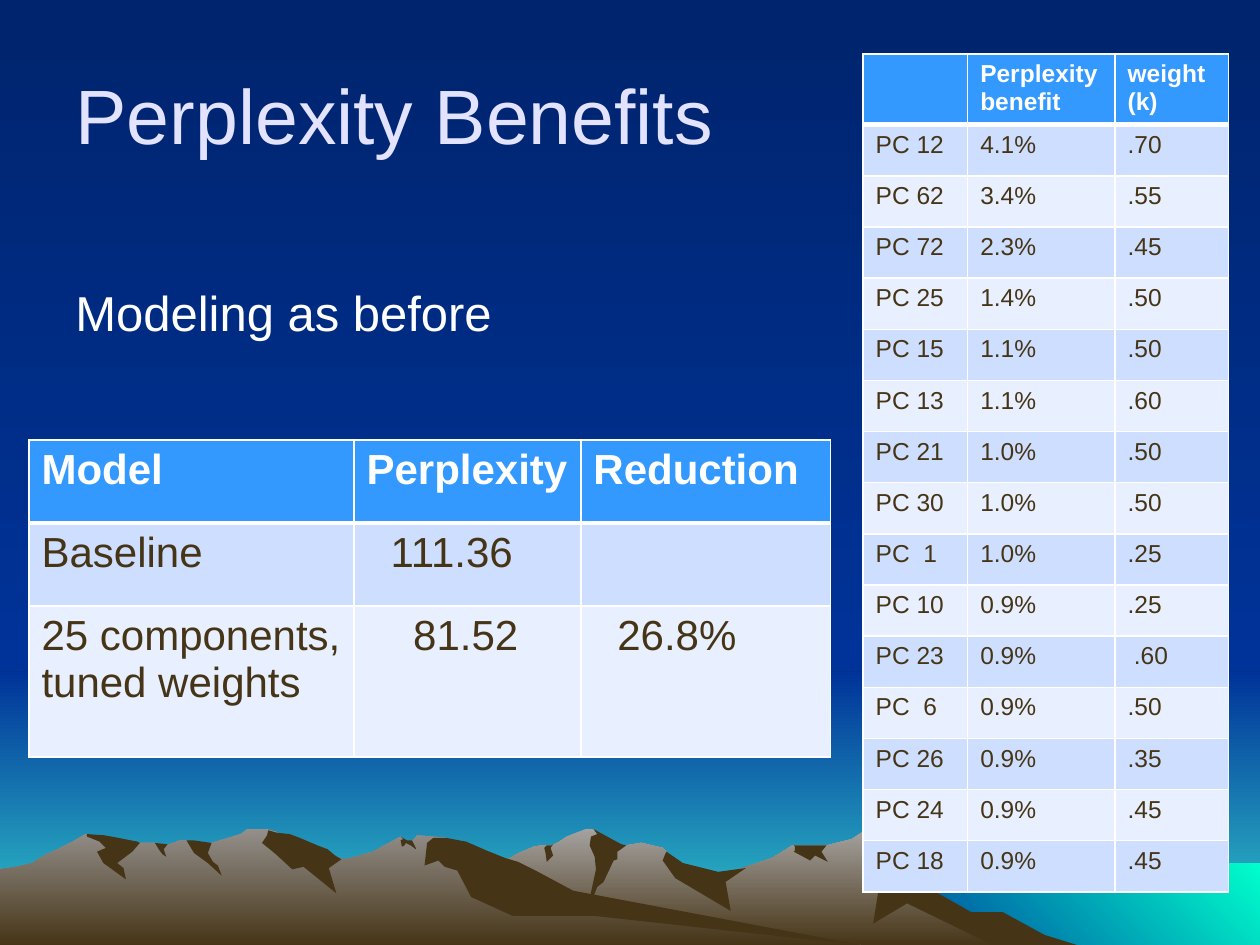
from lxml import etree
from pptx import Presentation
from pptx.dml.color import RGBColor
from pptx.enum.shapes import MSO_SHAPE
from pptx.enum.text import MSO_ANCHOR, MSO_AUTO_SIZE, PP_ALIGN
from pptx.oxml.ns import qn
from pptx.util import Inches, Pt

RECTANGLE = MSO_SHAPE.RECTANGLE
MIDDLE = MSO_ANCHOR.MIDDLE
NO_FIT = MSO_AUTO_SIZE.NONE
LEFT = PP_ALIGN.LEFT

WIDTH, HEIGHT = 10, 7.5
HORIZON = 5.33
FONT = "Arial"
EARTH, WHITE, LAVENDER, HEADER = "463416", "FFFFFF", "E3E3FF", "3399FF"
BANDS = ["CEDEFF", "E8EFFF"]
SKY = ("00246D", "003399")
DOWN, UP_RIGHT = 270, 45

TITLE = "Perplexity Benefits"
NOTE = "Modeling as before"

COMPONENTS = {
    "rows": [
        ("", "Perplexity benefit", "weight (k)"),
        ("PC 12", "4.1%", ".70"), ("PC 62", "3.4%", ".55"), ("PC 72", "2.3%", ".45"),
        ("PC 25", "1.4%", ".50"), ("PC 15", "1.1%", ".50"), ("PC 13", "1.1%", ".60"),
        ("PC 21", "1.0%", ".50"), ("PC 30", "1.0%", ".50"), ("PC  1", "1.0%", ".25"),
        ("PC 10", "0.9%", ".25"), ("PC 23", "0.9%", ".60"), ("PC  6", "0.9%", ".50"),
        ("PC 26", "0.9%", ".35"), ("PC 24", "0.9%", ".45"), ("PC 18", "0.9%", ".45"),
    ],
    "place": (6.85, 0.43),
    "widths": [0.83, 1.17, 0.9],
    "heights": [0.56] + [6.09 / 15] * 15,
    "size": 14,
    "indents": {(11, 2): 0.05},
}
MODELS = {
    "rows": [
        ("Model", "Perplexity", "Reduction"),
        ("Baseline", "111.36", ""),
        ("25 components, tuned weights", "81.52", "26.8%"),
    ],
    "place": (0.23, 3.49),
    "widths": [2.58, 1.8, 1.98],
    "heights": [0.66, 0.66, 1.2],
    "size": 24,
    "indents": {(1, 1): 0.19, (2, 1): 0.37, (2, 2): 0.19},
}

BACKDROP = [
    ((0, HORIZON, WIDTH, HEIGHT - HORIZON), ("003399", "33CCCC"), DOWN),
    ((0, 0, WIDTH, HORIZON), SKY, DOWN),
    ((6.83, 6.85, 3.17, 0.65), ("003399", "00FFCC"), UP_RIGHT),
]

UNITS_PER_INCH = 100
RIGHT_RANGE = [
    (802, 740), (778, 727), (764, 723), (723, 698), (702, 671), (685, 660), (676, 666),
    (656, 671), (629, 671), (613, 681), (566, 697), (536, 690), (529, 676), (526, 673),
    (509, 669), (497, 671), (486, 673), (474, 661), (471, 658), (465, 658), (450, 664),
    (444, 668), (438, 671), (430, 671), (424, 672), (412, 677), (405, 681), (394, 685),
    (355, 698), (327, 709), (277, 739), (258, 751), (821, 751)]
RIGHT_SHADOWS = [
    [(796, 724), (771, 724), (734, 703), (707, 671), (685, 660), (689, 664), (685, 671),
     (691, 680), (698, 702), (693, 733), (720, 717), (792, 752), (858, 751), (829, 742)],
    [(471, 658), (474, 662), (469, 664), (468, 671), (472, 680), (473, 690), (465, 727),
     (474, 704), (479, 700), (487, 683), (490, 682), (490, 676), (497, 671), (493, 670)],
    [(529, 676), (528, 678), (526, 683), (536, 697), (580, 723), (576, 700), (592, 689),
     (570, 692), (542, 685)],
    [(650, 671), (630, 671), (631, 672), (631, 675), (630, 676), (643, 683), (647, 679),
     (657, 684), (652, 676), (656, 671)],
    [(433, 677), (432, 673), (434, 671), (438, 671), (439, 670), (437, 673), (439, 679),
     (434, 684)],
]
LEFT_RANGE = [
    (690, 751), (667, 748), (432, 712), (354, 665), (331, 663), (327, 668), (323, 668),
    (318, 664), (296, 676), (279, 681), (271, 682), (260, 676), (236, 681), (223, 663),
    (219, 660), (212, 658), (196, 658), (191, 662), (178, 666), (168, 669), (160, 671),
    (148, 667), (143, 667), (132, 671), (128, 671), (123, 669), (111, 669), (94, 671),
    (68, 662), (56, 669), (46, 674), (35, 679), (26, 685), (14, 688), (0, 690), (0, 751)]
LEFT_SHADOWS = [
    [(212, 663), (208, 669), (219, 678), (232, 690), (241, 688), (267, 709), (261, 689),
     (271, 682), (266, 679), (260, 674), (252, 671), (238, 665), (230, 662), (220, 661),
     (213, 659)],
    [(370, 668), (354, 665), (344, 665), (339, 669), (337, 687), (348, 683), (353, 688),
     (363, 691), (374, 712), (407, 727), (472, 727), (690, 751), (683, 750), (455, 707),
     (427, 692), (411, 684), (401, 681), (386, 675)],
    [(318, 667), (320, 666), (318, 664), (323, 667), (327, 667), (330, 673), (330, 674),
     (326, 671), (322, 669), (321, 671), (319, 672)],
    [(154, 667), (161, 668), (168, 669), (165, 677), (169, 684), (173, 687), (176, 695),
     (165, 685), (154, 677), (148, 667)],
    [(133, 670), (130, 674), (132, 680), (129, 678), (126, 674), (123, 669)],
    [(109, 668), (111, 669), (105, 676), (93, 685), (98, 689), (100, 698), (82, 685),
     (77, 676), (84, 673), (79, 668), (69, 664), (69, 662), (83, 663), (94, 665)],
]


def color(value):
    return RGBColor.from_string(value)


def blend(fill, colors, angle):
    fill.gradient()
    fill.gradient_angle = angle
    for stop, value in zip(fill.gradient_stops, colors):
        stop.color.rgb = color(value)


def paint(shape, colors, angle=DOWN):
    shape.shadow.inherit = False
    shape.line.fill.background()
    if isinstance(colors, str):
        shape.fill.solid()
        shape.fill.fore_color.rgb = color(colors)
    else:
        blend(shape.fill, colors, angle)


def draw_outline(slide, points, colors):
    builder = slide.shapes.build_freeform(*points[0], scale=Inches(1) / UNITS_PER_INCH)
    builder.add_line_segments(points[1:], close=True)
    paint(builder.convert_to_shape(), colors)


def write(frame, text, size=14, fill=WHITE, bold=False):
    para = frame.paragraphs[0]
    para.alignment = LEFT
    span = para.add_run()
    span.text = text
    span.font.name = FONT
    span.font.size = Pt(size)
    span.font.bold = bold
    span.font.color.rgb = color(fill)


def add_borders(cell, row):
    properties = cell._tc.get_or_add_tcPr()
    weights = {"lnL": 1, "lnR": 1, "lnT": 3 if row == 1 else 1, "lnB": 3 if row == 0 else 1}
    for position, (side, weight) in enumerate(weights.items()):
        line = etree.Element(qn(f"a:{side}"), w=str(Pt(weight)))
        solid = etree.SubElement(line, qn("a:solidFill"))
        etree.SubElement(solid, qn("a:srgbClr"), val=WHITE)
        properties.insert(position, line)


def draw_table(slide, rows, place, widths, heights, size, indents):
    lengths = (*place, sum(widths), sum(heights))
    table = slide.shapes.add_table(len(rows), len(widths), *map(Inches, lengths)).table
    for column, width in zip(table.columns, widths):
        column.width = Inches(width)
    for row, (texts, height) in enumerate(zip(rows, heights)):
        table.rows[row].height = Inches(height)
        head = row == 0
        for column, text in enumerate(texts):
            cell = table.cell(row, column)
            cell.fill.solid()
            cell.fill.fore_color.rgb = color(HEADER if head else BANDS[(row - 1) % 2])
            cell.margin_left = Inches(0.1 + indents.get((row, column), 0))
            add_borders(cell, row)
            if text:
                write(cell.text_frame, text, size=size, fill=WHITE if head else EARTH, bold=head)


def main():
    deck = Presentation()
    deck.slide_width, deck.slide_height = Inches(WIDTH), Inches(HEIGHT)
    slide = deck.slides.add_slide(deck.slide_layouts[5])
    blend(slide.background.fill, SKY, DOWN)

    for place, colors, angle in BACKDROP:
        paint(slide.shapes.add_shape(RECTANGLE, *map(Inches, place)), colors, angle)
    for ridge, top, shadows in [(RIGHT_RANGE, "A5A29F", RIGHT_SHADOWS),
                                (LEFT_RANGE, "938F8B", LEFT_SHADOWS)]:
        draw_outline(slide, ridge, (top, EARTH))
        for shadow in shadows:
            draw_outline(slide, shadow, EARTH)

    title = slide.shapes.title
    slide.shapes._spTree.append(title._element)
    title.left, title.top, title.width, title.height = map(Inches, (0.5, 0.25, 9, 1.25))
    title.text_frame.auto_size = NO_FIT
    title.text_frame.vertical_anchor = MIDDLE
    title.text_frame.margin_bottom = 0
    write(title.text_frame, TITLE, size=44, fill=LAVENDER)

    draw_table(slide, **COMPONENTS)
    draw_table(slide, **MODELS)

    note = slide.shapes.add_textbox(*map(Inches, (0.5, 2.19, 3.55, 0.57)))
    write(note.text_frame, NOTE, size=28)
    deck.save("out.pptx")


if __name__ == "__main__":
    main()
